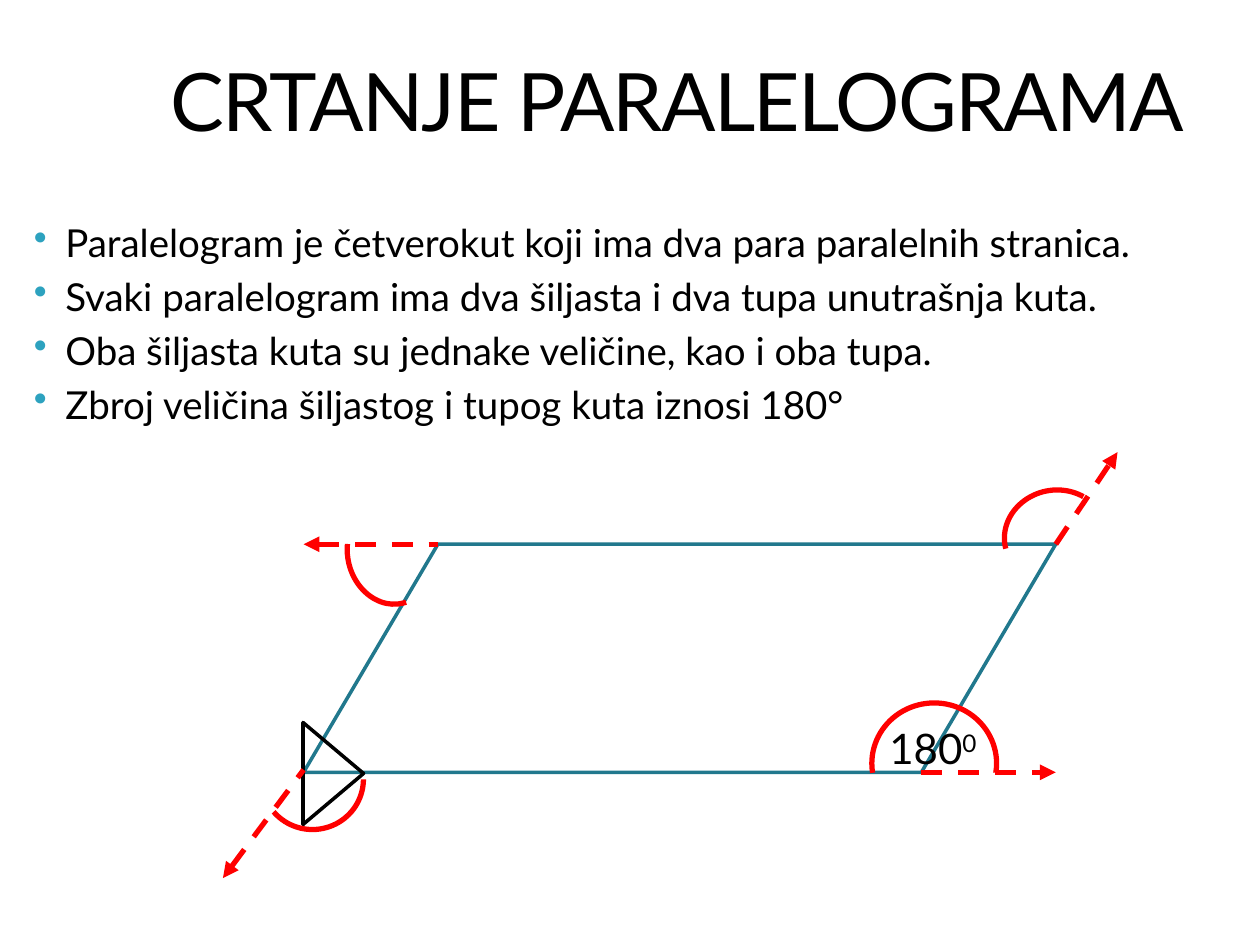
from lxml import etree
from pptx import Presentation
from pptx.dml.color import RGBColor
from pptx.enum.dml import MSO_LINE
from pptx.enum.shapes import MSO_CONNECTOR, MSO_SHAPE
from pptx.enum.text import MSO_ANCHOR, MSO_AUTO_SIZE, PP_ALIGN
from pptx.oxml.ns import qn
from pptx.util import Pt

ARC, PARALLELOGRAM, TRIANGLE = (
    MSO_SHAPE.ARC, MSO_SHAPE.PARALLELOGRAM, MSO_SHAPE.ISOSCELES_TRIANGLE)
STRAIGHT, DASH = MSO_CONNECTOR.STRAIGHT, MSO_LINE.DASH
MIDDLE, CENTER = MSO_ANCHOR.MIDDLE, PP_ALIGN.CENTER
GROW = MSO_AUTO_SIZE.SHAPE_TO_FIT_TEXT

FONT = "Lato"
BLACK, RED, TEAL, BULLET = "000000", "FF0000", "21788D", "2DA2BF"

FACTS = [
    "Paralelogram je četverokut koji ima dva para paralelnih stranica.",
    "Svaki paralelogram ima dva šiljasta i dva tupa unutrašnja kuta.",
    "Oba šiljasta kuta su jednake veličine, kao i oba tupa.",
    "Zbroj veličina šiljastog i tupog kuta iznosi 180°",
]


def color(value):
    return RGBColor.from_string(value)


def add_text(page, box):
    frame = page.shapes.add_textbox(*map(Pt, box)).text_frame
    frame.word_wrap = True
    return frame


def style(para, size):
    para.font.name = FONT
    para.font.size = Pt(size)
    para.font.color.rgb = color(BLACK)


def add_outline(page, kind, box, line_color, width, rotation=0, adjust=()):
    shape = page.shapes.add_shape(kind, *map(Pt, box))
    shape.shadow.inherit = False
    shape.fill.background()
    shape.line.color.rgb = color(line_color)
    shape.line.width = Pt(width)
    shape.rotation = rotation
    for index, value in enumerate(adjust):
        shape.adjustments[index] = value


def add_ray(page, start, end, arrow):
    """Dashed arrow; arrow is headEnd (at start) or tailEnd (at end)."""
    ray = page.shapes.add_connector(STRAIGHT, *map(Pt, start + end))
    ray.line.color.rgb = color(RED)
    ray.line.width = Pt(3)
    ray.line.dash_style = DASH
    etree.SubElement(ray.line._get_or_add_ln(), qn(f"a:{arrow}"), type="triangle")
    etree.SubElement(ray._element.spPr, qn("a:effectLst"))


def add_title(page, box):
    frame = add_text(page, box)
    frame.vertical_anchor = MIDDLE
    para = frame.paragraphs[0]
    para.alignment = CENTER
    style(para, 46)
    span = para.add_run()
    span.text = "CRTANJE PARALELOGRAMA"
    span.font._element.set("spc", "-100")


def add_facts(page, box):
    frame = add_text(page, box)
    for index, fact in enumerate(FACTS):
        para = frame.paragraphs[0] if index == 0 else frame.add_paragraph()
        para.text = fact
        para.space_before = Pt(4.4)
        style(para, 22)
        # Coloured bullet with a hanging indent
        props = para._p.get_or_add_pPr()
        props.set("marL", str(Pt(27.4)))
        props.set("indent", str(Pt(-18)))
        bullet_color = etree.Element(qn("a:buClr"))
        etree.SubElement(bullet_color, qn("a:srgbClr"), val=BULLET)
        bullet = etree.Element(qn("a:buChar"), char="•")
        defaults = props.find(qn("a:defRPr"))
        defaults.addprevious(bullet_color)
        defaults.addprevious(bullet)


def add_angle_label(page, box):
    frame = add_text(page, box)
    frame.auto_size = GROW
    para = frame.paragraphs[0]
    style(para, 24)
    para.add_run().text = "180"
    exponent = para.add_run()
    exponent.text = "0"
    exponent.font._element.set("baseline", "30000")


def add_figure(page, box):
    left, top, width, height = box
    right, bottom = left + width, top + height
    slant = 0.589 * height

    add_outline(page, PARALLELOGRAM, box, TEAL, 2, adjust=[0.589])
    # Set square at the lower left corner
    add_outline(page, TRIANGLE, (left - 12.2, bottom - 16.6, 58.3, 34.6),
                BLACK, 2, rotation=90)

    # Extended sides
    add_ray(page, (right - slant, bottom), (right, bottom), "tailEnd")
    add_ray(page, (left, top), (left + slant, top), "headEnd")
    add_ray(page, (right, top), (right + 35.3, top - 52.6), "tailEnd")
    add_ray(page, (left - 46.1, bottom + 60.5), (left, bottom - 1.4), "headEnd")

    # Angle arcs: box, rotation, start and end of the sweep
    wide = (160.421, 28.181)
    arcs = [
        ((right - 105.1, bottom - 39.6, 71.3, 69.1), 0, (102.769, 5.237)),
        ((left + 25.2, top - 23.8, 49, 58.3), 165.9, (159.812, 16.014)),
        ((right - 26.6, top - 33.8, 52.6, 58.3), 258.5, wide),
        ((left - 23.8, bottom - 25.2, 57.6, 58.3), 92.9, wide),
    ]
    for arc_box, rotation, sweep in arcs:
        add_outline(page, ARC, arc_box, RED, 3, rotation, sweep)

    add_angle_label(page, (right - 102.2, bottom - 31.7, 75.6, 36))


def main():
    deck = Presentation()
    deck.slide_width, deck.slide_height = Pt(720), Pt(540)
    page = deck.slides.add_slide(deck.slide_layouts[6])
    add_title(page, (71.3, 25.9, 631.4, 61.9))
    add_facts(page, (2.9, 121.7, 672.5, 132.5))
    add_figure(page, (173.5, 311, 429.8, 130.3))
    deck.save("out.pptx")


if __name__ == "__main__":
    main()
